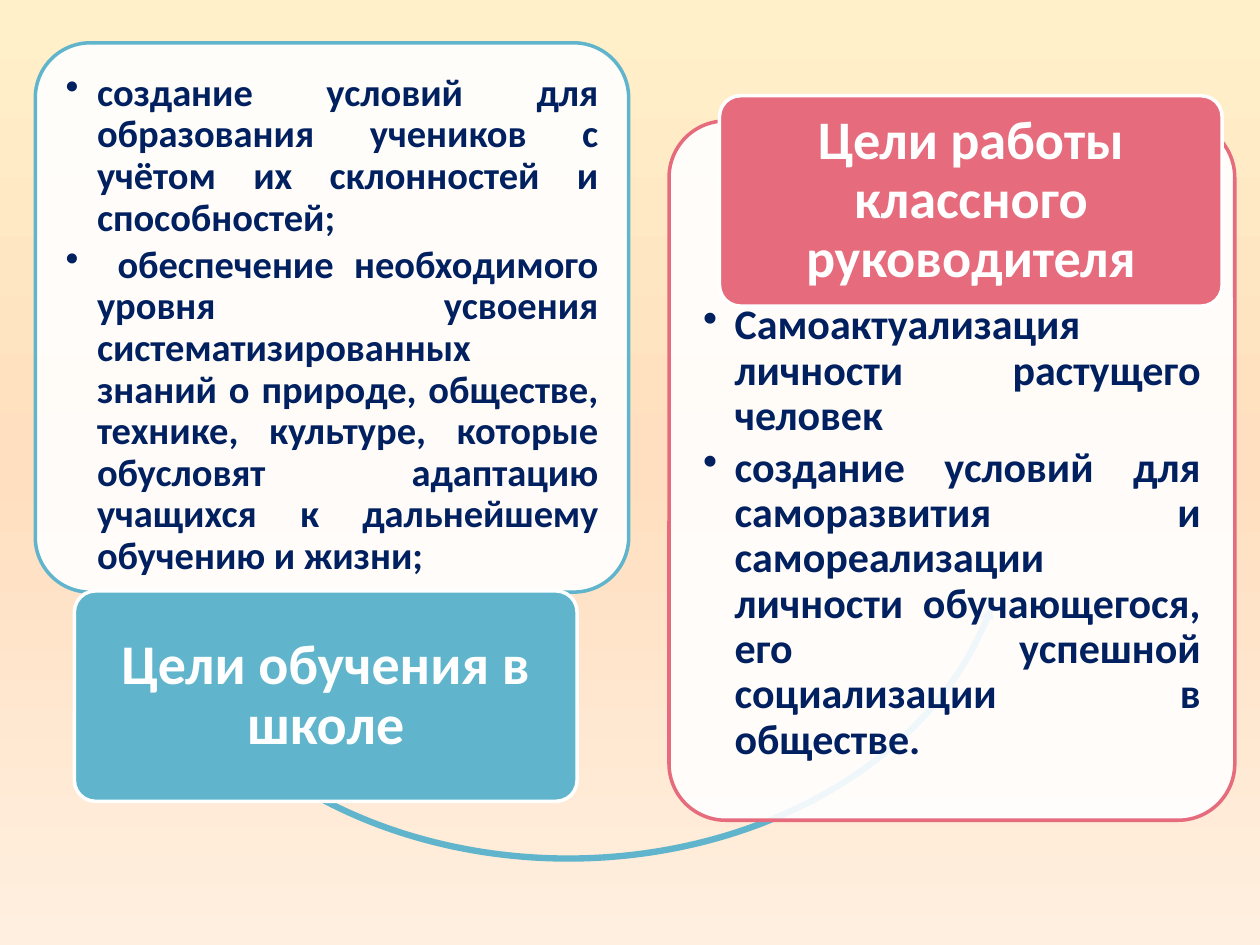
from copy import deepcopy

from lxml.etree import SubElement as Sub
from pptx import Presentation
from pptx.dml.color import RGBColor as Rgb
from pptx.enum.shapes import MSO_SHAPE as Form
from pptx.enum.text import MSO_ANCHOR as Anchor, PP_ALIGN as Align
from pptx.oxml.ns import qn
from pptx.util import Inches, Pt

COLS, ROWS = 100, 75
HUES = {"blue": "60B5CC", "rose": "E66C7D", "navy": "002060", "white": "FFFFFF"}
SKY = [(0, "FFF0C9"), (0.5, "FFDFBF"), (1, "FFEFE0")]
HEAD = (39.9, 16.7)

SCHOOL = [
    "создание условий для образования учеников с учётом их склонностей и способностей;",
    " обеспечение необходимого уровня усвоения систематизированных знаний о природе, "
    "обществе, технике, культуре, которые обусловят адаптацию учащихся к дальнейшему "
    "обучению и жизни;",
]
TUTOR = [
    "Самоактуализация личности растущего человек",
    "создание условий для саморазвития и самореализации личности обучающегося, "
    "его успешной социализации в обществе.",
]


class Deck:
    """Holds the style and the current slide; boxes are (col, row, cols, rows)."""

    def __init__(self, font="Calibri"):
        self.font = font
        self.file = Presentation()
        self.file.slide_width, self.file.slide_height = Inches(10), Inches(7.5)
        self.slide = self.file.slides.add_slide(self.file.slide_layouts[6])

    def place(self, box):
        wide, high = self.file.slide_width, self.file.slide_height
        units = (wide / COLS, high / ROWS) * 2
        return [round(n * unit) for n, unit in zip(box, units)]

    def sky(self, stops):
        """Fill the background with a top-to-bottom gradient."""
        fill = self.slide.background.fill
        fill.gradient()
        fill.gradient_angle = 270
        marks = self.slide.element.find(".//" + qn("a:gsLst"))
        marks.append(deepcopy(marks[0]))
        for stop, (place, hue) in zip(fill.gradient_stops, stops):
            stop.position = place
            stop.color.rgb = Rgb.from_string(hue)

    def shape(self, form, box, hue, edge=None, adjust=(0.1,), alpha=None):
        shape = self.slide.shapes.add_shape(form, *self.place(box))
        shape.shadow.inherit = False
        for i, value in enumerate(adjust):
            shape.adjustments[i] = value
        shape.fill.solid()
        shape.fill.fore_color.rgb = Rgb.from_string(HUES[hue])
        if alpha:
            tint = shape.element.spPr.find(".//" + qn("a:srgbClr"))
            Sub(tint, qn("a:alpha"), val=str(alpha * 1000))
        if edge:
            shape.line.color.rgb = Rgb.from_string(HUES[edge])
            shape.line.width = Pt(2)
        else:
            shape.line.fill.background()

    def text(self, box, lines, size, hue, inset, align, after, anchor=Anchor.TOP, dots=False):
        frame = self.slide.shapes.add_textbox(*self.place(box)).text_frame
        frame.word_wrap = True
        frame.vertical_anchor = anchor
        frame.margin_left = frame.margin_right = Inches(inset[0])
        frame.margin_top = frame.margin_bottom = Inches(inset[1])
        for i, line in enumerate(lines):
            para = frame.add_paragraph() if i else frame.paragraphs[0]
            para.alignment = align
            para.line_spacing = 0.9
            para.space_after = Pt(size * after)
            if dots:
                self.dot(para)
            run = para.add_run()
            run.text = line
            run.font.name, run.font.size, run.font.bold = self.font, Pt(size), True
            run.font.color.rgb = Rgb.from_string(HUES[hue])

    def dot(self, para):
        """Give the paragraph a hanging bullet."""
        para.level = 1
        props = para._p.get_or_add_pPr()
        props.set("marL", str(Inches(0.25)))
        props.set("indent", str(-Inches(0.25)))
        Sub(props, qn("a:buChar"), char="•")

    def card(self, box, edge):
        self.shape(Form.ROUNDED_RECTANGLE, box, "white", edge, alpha=90)

    def goals(self, box, lines, size):
        self.text(box, lines, size, "navy", (0.14, 0.14), Align.JUSTIFY, 0.15, dots=True)

    def head(self, col, row, line, size, hue):
        wide, high = HEAD
        self.shape(Form.ROUNDED_RECTANGLE, (col, row, wide, high), hue, "white")
        inner = (col + 0.5, row + 0.5, wide - 1, high - 1)
        self.text(inner, [line], size, "white", (0.07, 0.04), Align.CENTER, 0.35, Anchor.MIDDLE)

    def curve(self, box, hue):
        bend = (0.009, 1.02, 8.374, 79.844, 0.01)
        self.shape(Form.LEFT_CIRCULAR_ARROW, box, hue, adjust=bend)


def main():
    deck = Deck()
    deck.sky(SKY)
    deck.card((2.8, 3.4, 47.1, 43.6), "blue")
    deck.goals((3.8, 4.4, 45.1, 32.2), SCHOOL, 22)
    deck.curve((9.7, 13, 70.8, 55.7), "blue")
    deck.head(5.9, 46.9, "Цели обучения в школе", 32, "blue")
    deck.card((53.1, 9.6, 44.9, 55.5), "rose")
    deck.goals((54.4, 22.7, 42.3, 41), TUTOR, 24)
    deck.head(57.1, 7.6, "Цели работы классного руководителя", 31, "rose")
    deck.file.save("out.pptx")


if __name__ == "__main__":
    main()
